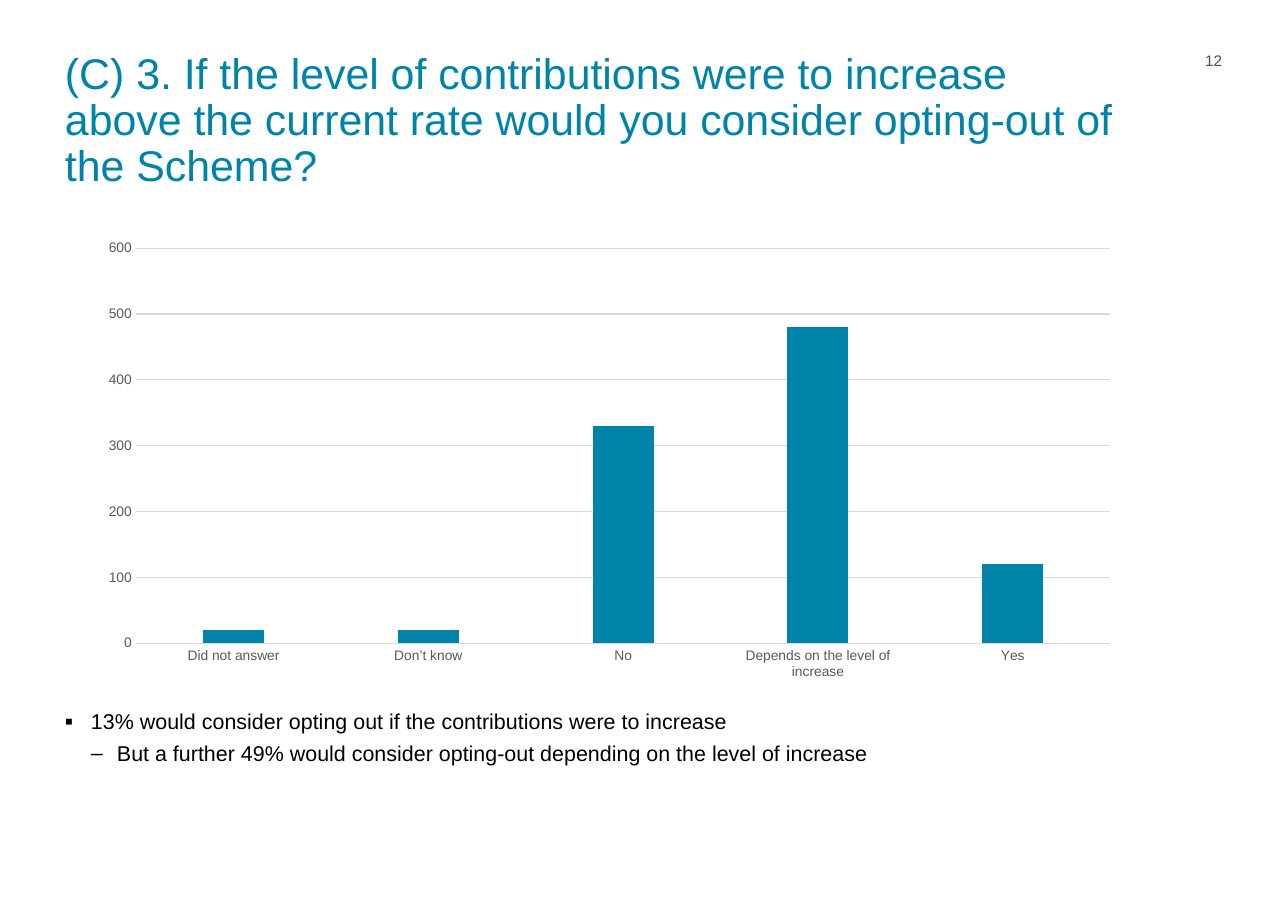
import dataclasses
from typing import Any

import pptx
import pptx.chart.data
import pptx.dml.color
import pptx.enum.chart
import pptx.enum.text
import pptx.oxml
import pptx.oxml.ns
import pptx.util

EMU_PER_PX = 914400 / 110.2
FONT = "Arial"
TEAL = "0083A9"
AXIS_TEXT = "595959"
AXIS_LINE = "D9D9D9"
TITLE = (
    "(C) 3. If the level of contributions were to increase above the current rate "
    "would you consider opting-out of the Scheme?"
)
ANSWERS = {
    "Did not answer": 20,
    "Don’t know": 20,
    "No": 330,
    "Depends on the level of increase": 480,
    "Yes": 120,
}


@dataclasses.dataclass(frozen=True)
class Area:
    left: int
    top: int
    width: int
    height: int


@dataclasses.dataclass(frozen=True)
class Bullet:
    text: str
    symbol: str
    level: int
    size_percent: int
    space_before: int


TITLE_AREA = Area(65, 52, 1067, 91)
NUMBER_AREA = Area(1179, 53, 43, 22)
CHART_AREA = Area(88, 231, 1043, 458)
BODY_AREA = Area(65, 707, 1174, 164)
INDENT = 26
BULLETS = [
    Bullet("13% would consider opting out if the contributions were to increase", "▪", 0, 110, 0),
    Bullet(
        "But a further 49% would consider opting-out depending on the level of increase",
        "‒", 1, 100, 3,
    ),
]


def px(length: int) -> int:
    return round(length * EMU_PER_PX)


def colour(value: str) -> pptx.dml.color.RGBColor:
    return pptx.dml.color.RGBColor.from_string(value)


def apply_format(target: Any, values: dict[str, Any]) -> None:
    for name, value in values.items():
        setattr(target, name, value)


def format_font(font: Any, size: int, hex_colour: str) -> None:
    apply_format(font, {"name": FONT, "size": pptx.util.Pt(size), "bold": False})
    font.color.rgb = colour(hex_colour)


def place(shape: Any, area: Area) -> None:
    apply_format(shape, {name: px(value) for name, value in dataclasses.asdict(area).items()})


def prepare_frame(frame: Any) -> None:
    apply_format(frame, {
        "margin_left": 0,
        "margin_top": 0,
        "margin_right": 0,
        "margin_bottom": 0,
        "word_wrap": True,
        "auto_size": pptx.enum.text.MSO_AUTO_SIZE.NONE,
        "vertical_anchor": pptx.enum.text.MSO_ANCHOR.TOP,
    })


def add_text_box(page: Any, area: Area) -> Any:
    box = page.shapes.add_textbox(
        px(area.left), px(area.top), px(area.width), px(area.height)
    )
    prepare_frame(box.text_frame)
    return box.text_frame


def write_line(para: Any, text: str, size: int, hex_colour: str, align: Any, spacing: float) -> None:
    apply_format(para, {"text": text, "alignment": align, "line_spacing": spacing})
    format_font(para.runs[0].font, size, hex_colour)


def add_bullet_mark(para: Any, bullet: Bullet) -> None:
    properties = para._p.get_or_add_pPr()
    properties.set("marL", str(px(INDENT * (bullet.level + 1))))
    properties.set("indent", str(-px(INDENT)))
    namespace = pptx.oxml.ns.nsdecls("a")
    for markup in (
        f'<a:buClr {namespace}><a:srgbClr val="000000"/></a:buClr>',
        f'<a:buSzPct {namespace} val="{bullet.size_percent * 1000}"/>',
        f'<a:buFont {namespace} typeface="{FONT}"/>',
        f'<a:buChar {namespace} char="{bullet.symbol}"/>',
    ):
        properties.append(pptx.oxml.parse_xml(markup))


def add_bullets(page: Any) -> None:
    frame = add_text_box(page, BODY_AREA)
    for index, bullet in enumerate(BULLETS):
        para = frame.add_paragraph() if index else frame.paragraphs[0]
        add_bullet_mark(para, bullet)
        apply_format(para, {
            "level": bullet.level,
            "space_before": pptx.util.Pt(bullet.space_before),
        })
        write_line(para, bullet.text, 14, "000000", pptx.enum.text.PP_ALIGN.LEFT, 1.05)


def format_line(line: Any) -> None:
    line.color.rgb = colour(AXIS_LINE)
    line.width = pptx.util.Pt(0.75)


def add_answer_chart(page: Any) -> None:
    data = pptx.chart.data.CategoryChartData()
    data.categories = list(ANSWERS)
    data.add_series("Series 1", list(ANSWERS.values()))
    chart = page.shapes.add_chart(
        pptx.enum.chart.XL_CHART_TYPE.COLUMN_CLUSTERED,
        px(CHART_AREA.left), px(CHART_AREA.top), px(CHART_AREA.width), px(CHART_AREA.height),
        data,
    ).chart
    apply_format(chart, {"has_legend": False, "has_title": False})
    format_font(chart.font, 10, "000000")
    plot = chart.plots[0]
    apply_format(plot, {"gap_width": 219, "overlap": -27, "vary_by_categories": False})
    fill = plot.series[0].format.fill
    fill.solid()
    fill.fore_color.rgb = colour(TEAL)
    for axis in (chart.category_axis, chart.value_axis):
        apply_format(axis, {
            "major_tick_mark": pptx.enum.chart.XL_TICK_MARK.NONE,
            "minor_tick_mark": pptx.enum.chart.XL_TICK_MARK.NONE,
        })
        format_font(axis.tick_labels.font, 9, AXIS_TEXT)
    format_line(chart.category_axis.format.line)
    apply_format(chart.value_axis, {
        "minimum_scale": 0,
        "maximum_scale": 600,
        "major_unit": 100,
        "has_major_gridlines": True,
    })
    chart.value_axis.format.line.fill.background()
    format_line(chart.value_axis.major_gridlines.format.line)


def main() -> None:
    deck = pptx.Presentation()
    apply_format(deck, {"slide_width": px(1288), "slide_height": px(911)})
    page = deck.slides.add_slide(deck.slide_layouts[5])
    align = pptx.enum.text.PP_ALIGN

    title = page.shapes.title
    place(title, TITLE_AREA)
    prepare_frame(title.text_frame)
    write_line(title.text_frame.paragraphs[0], TITLE, 28, TEAL, align.LEFT, 0.9)

    add_answer_chart(page)
    add_bullets(page)
    number = add_text_box(page, NUMBER_AREA)
    write_line(number.paragraphs[0], "12", 10, "4D4F53", align.RIGHT, 0.9)
    deck.save("out.pptx")


if __name__ == "__main__":
    main()
